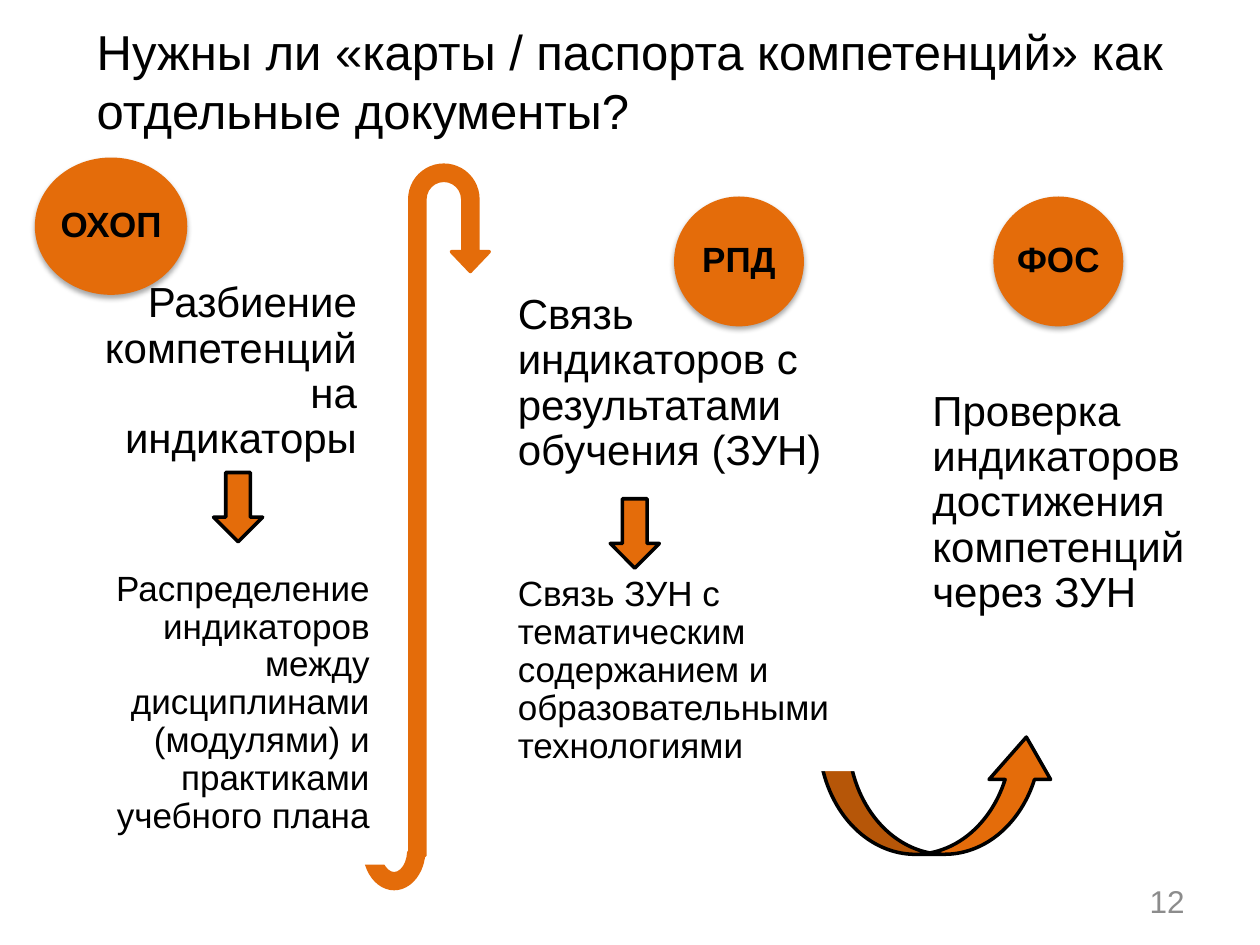
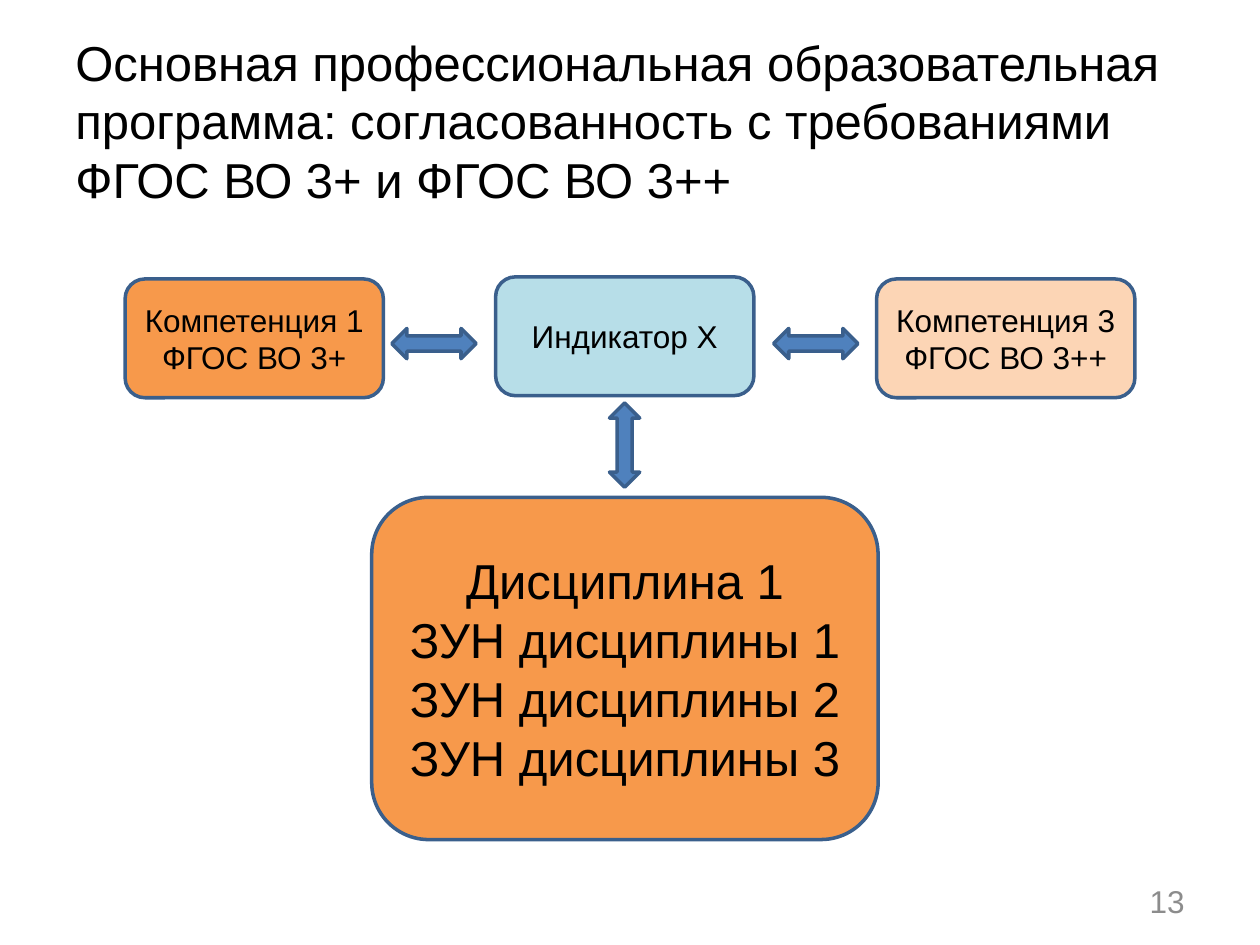
from dataclasses import dataclass

from lxml import etree
from pptx import Presentation
from pptx.dml.color import RGBColor
from pptx.enum import shapes, text
from pptx.oxml import ns
from pptx.util import Pt

FONT = "Arial"
BLACK, WHITE, GREY = "000000", "FFFFFF", "8C8C8C"
RUST, AMBER, PEACH = "E46C0A", "F7994B", "FCD5B5"
SKY, BLUE, NAVY = "B7DEE8", "4F81BD", "3A5F8C"
KIND = shapes.MSO_SHAPE
LEFT, MID, RIGHT = text.PP_ALIGN.LEFT, text.PP_ALIGN.CENTER, text.PP_ALIGN.RIGHT
INSET = (7.2, 3.6, 7.2, 3.6)


@dataclass(frozen=True)
class Box:
    """Place of an object in points."""
    x: float
    y: float
    w: float
    h: float


@dataclass(frozen=True)
class Form:
    """A preset shape with its paint and geometry."""
    kind: KIND
    box: Box
    fill: str
    line: str | None = None
    turn: float = 0
    adj: tuple[float, ...] = ()


@dataclass(frozen=True)
class Panel:
    """A text block on a white ground, with its left indent."""
    box: Box
    words: str
    size: float
    dent: float
    align: text.PP_ALIGN = LEFT


@dataclass(frozen=True)
class Label:
    """A captioned shape."""
    form: Form
    words: str
    size: float = 18


def paint(target, code: str) -> None:
    """Give a fill, or the fill of a line, one solid colour."""
    target.solid()
    target.fore_color.rgb = RGBColor.from_string(code)


def write(shape, words: str, *, size: float, color: str = BLACK, bold: bool = False,
          align=LEFT, inset=INSET, space: float = 1.0) -> None:
    """Fill a shape with formatted paragraphs."""
    frame = shape.text_frame
    frame.word_wrap = True
    frame.vertical_anchor = text.MSO_ANCHOR.MIDDLE
    (frame.margin_left, frame.margin_top,
     frame.margin_right, frame.margin_bottom) = map(Pt, inset)
    frame.text = words
    for para in frame.paragraphs:
        para.alignment, para.line_spacing = align, space
        font = para.font
        font.name, font.size, font.bold = FONT, Pt(size), bold
        font.color.rgb = RGBColor.from_string(color)


def place(box: Box) -> tuple[Pt, ...]:
    """Turn a box into slide lengths."""
    return Pt(box.x), Pt(box.y), Pt(box.w), Pt(box.h)


def draw(slide, form: Form):
    """Draw one preset shape."""
    shape = slide.shapes.add_shape(form.kind, *place(form.box))
    shape.shadow.inherit = False
    shape.rotation = form.turn
    for spot, value in enumerate(form.adj):
        shape.adjustments[spot] = value
    paint(shape.fill, form.fill)
    if form.line:
        paint(shape.line.fill, form.line)
        shape.line.width = Pt(2)
    else:
        shape.line.fill.background()
    return shape


def shade(shape) -> None:
    """Add a soft shadow below a shape."""
    effects = shape.element.spPr.find(ns.qn("a:effectLst"))
    outer = etree.SubElement(effects, ns.qn("a:outerShdw"), blurRad=str(Pt(3.1)),
                             dist=str(Pt(1.8)), dir="5400000", rotWithShape="0")
    color = etree.SubElement(outer, ns.qn("a:srgbClr"), val=BLACK)
    etree.SubElement(color, ns.qn("a:alpha"), val="35000")


def note(slide, box: Box, words: str, **style) -> None:
    """Add a text box."""
    write(slide.shapes.add_textbox(*place(box)), words, **style)


def start(deck, title: str, box: Box, page: int):
    """Add a slide with its title and page number."""
    slide = deck.slides.add_slide(deck.slide_layouts[6])
    note(slide, box, title, size=28)
    note(slide, Box(516.2, 500.4, 167.8, 28.8), str(page), size=18, color=GREY, align=RIGHT)
    return slide


def panel(slide, item: Panel) -> None:
    """Draw a text block on its ground."""
    pad = 13.7 if item.size > 20 else 11.5
    write(draw(slide, Form(KIND.RECTANGLE, item.box, WHITE)), item.words, size=item.size,
          align=item.align, inset=(item.dent, pad, pad, pad), space=0.9)


def label(slide, item: Label) -> None:
    """Draw a captioned shape."""
    write(draw(slide, item.form), item.words, size=item.size, align=MID)


def cards(deck) -> None:
    """Build the slide on competence cards."""
    slide = start(deck, "Нужны ли «карты / паспорта компетенций» как отдельные документы?",
                  Box(48.2, 3.6, 663.1, 85), 12)
    draw(slide, Form(KIND.BLOCK_ARC, Box(208.3, 463.8, 33.8, 43.9), RUST, RUST, 180,
                     (112.999, 0, 0.25)))
    draw(slide, Form(KIND.CURVED_UP_ARROW, Box(468, 421.2, 136.1, 67), RUST, BLACK,
                     adj=(0.25, 0.525, 0.362)))
    panels = (
        Panel(Box(29.5, 156.8, 188.2, 111.6), "Разбиение компетенций на индикаторы",
              24, 26, RIGHT),
        Panel(Box(29.5, 309.8, 193.3, 184.3),
              "Распределение индикаторов между дисциплинами (модулями) "
              "и практиками учебного плана", 20, 30, RIGHT),
        Panel(Box(258.5, 156.8, 234, 125.3),
              "Связь индикаторов с результатами обучения (ЗУН)", 24, 37.4),
        Panel(Box(258.5, 326.2, 234, 114.5),
              "Связь ЗУН с тематическим содержанием и образовательными технологиями",
              20, 37.4),
        Panel(Box(502.6, 156.8, 193, 261.4),
              "Проверка индикаторов достижения компетенций через ЗУН", 24, 30.2),
    )
    for item in panels:
        panel(slide, item)
    discs = (
        ("ОХОП", Box(19.9, 90, 87.1, 78.5)),
        ("РПД", Box(385.2, 112.3, 74.2, 74.2)),
        ("ФОС", Box(567.7, 112.3, 74.2, 74.2)),
    )
    for words, box in discs:
        disc = draw(slide, Form(KIND.OVAL, box, RUST))
        shade(disc)
        write(disc, words, size=20, bold=True, align=MID, inset=(0, 0, 0, 0), space=0.9)
    for x, y in ((122, 270), (348.7, 285)):
        draw(slide, Form(KIND.DOWN_ARROW, Box(x, y, 28.1, 39.6), RUST, BLACK))
    draw(slide, Form(KIND.U_TURN_ARROW, Box(234.2, 94.4, 45.4, 394.6), RUST, RUST,
                     adj=(0.19, 0.238, 0.25, 0.44, 0.154)))


def links(deck) -> None:
    """Build the slide on links between standards."""
    slide = start(deck, "Основная профессиональная образовательная программа: "
                  "согласованность с требованиями\vФГОС ВО 3+ и ФГОС ВО 3++",
                  Box(36, 14.8, 681.1, 108), 13)
    course = "\n".join(["Дисциплина 1"] + [f"ЗУН дисциплины {num}" for num in (1, 2, 3)])
    nodes = (
        (Box(212.4, 284.2, 289.4, 195.6), AMBER, course, 28),
        (Box(71.5, 159.4, 147.6, 67.9), AMBER, "Компетенция 1 ФГОС ВО 3+", 18),
        (Box(500.9, 159.4, 147.6, 67.9), PEACH, "Компетенция 3 ФГОС ВО 3++", 18),
        (Box(283.2, 158.2, 147.6, 67.9), SKY, "Индикатор Х", 18),
    )
    for box, fill, words, size in nodes:
        label(slide, Label(Form(KIND.ROUNDED_RECTANGLE, box, fill, NAVY), words, size))
    for x, y, turn in ((223.9, 187.7, 0), (442.1, 187.7, 0), (332.8, 245.7, 90)):
        draw(slide, Form(KIND.LEFT_RIGHT_ARROW, Box(x, y, 48.2, 17.3), BLUE, NAVY, turn))


def main() -> None:
    """Build and save the deck."""
    deck = Presentation()
    deck.slide_width, deck.slide_height = Pt(720), Pt(540)
    cards(deck)
    links(deck)
    deck.save("out.pptx")


if __name__ == "__main__":
    main()
